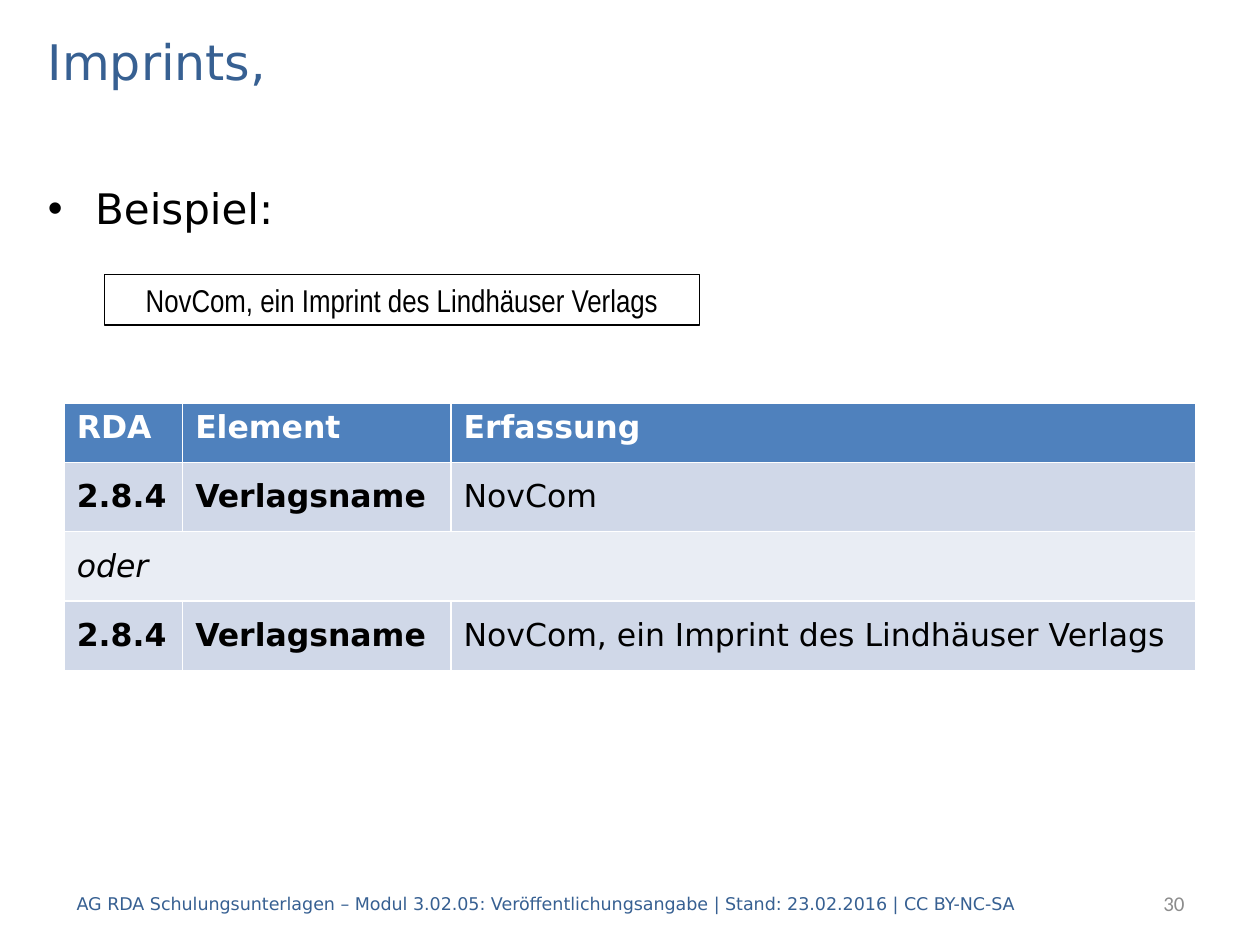
from pptx import Presentation
from pptx import util as u
from pptx.dml.color import RGBColor
from pptx.enum import shapes, text

BLUE = RGBColor(0x37, 0x60, 0x92)
HEADER = RGBColor(0x4F, 0x81, 0xBD)
BAND = RGBColor(0xD0, 0xD8, 0xE8)
PALE = RGBColor(0xE9, 0xED, 0xF4)
GREY = RGBColor(0x8C, 0x8C, 0x8C)
BLACK = RGBColor(0, 0, 0)
WHITE = RGBColor(255, 255, 255)
SANS = "DejaVu Sans"

TITLE = "Imprints,"
BULLET = "Beispiel:"
IMPRINT = "NovCom, ein Imprint des Lindhäuser Verlags"
FOOTER = ("AG RDA Schulungsunterlagen – Modul 3.02.05: Veröffentlichungsangabe"
          " | Stand: 23.02.2016 | CC BY-NC-SA")
NUMBER = "30"
ROWS = [
    ("RDA", "Element", "Erfassung"),
    ("2.8.4", "Verlagsname", "NovCom"),
    ("oder",),
    ("2.8.4", "Verlagsname", IMPRINT),
]
COLUMN_WIDTHS = (0.94, 2.13, 5.91)
ROW_HEIGHTS = (0.47, 0.55, 0.55, 0.55)
MIDDLE = text.MSO_ANCHOR.MIDDLE


def inches(*lengths):
    return [u.Inches(length) for length in lengths]


def write(frame, words, size, color=BLACK, font=SANS, bold=False, italic=False,
          align=text.PP_ALIGN.LEFT, gap=0):
    para = frame.paragraphs[0]
    para.alignment = align
    para.space_before = para.space_after = u.Pt(gap)
    span = para.add_run()
    span.text = words
    span.font.size = u.Pt(size)
    span.font.name = font
    span.font.color.rgb = color
    span.font.bold = bold
    span.font.italic = italic


def place(box, left, top, width, height, anchor=MIDDLE):
    box.left, box.top, box.width, box.height = inches(left, top, width, height)
    frame = box.text_frame
    frame.word_wrap = True
    frame.auto_size = text.MSO_AUTO_SIZE.NONE
    frame.vertical_anchor = anchor
    return frame


def add_imprint_box(page):
    box = page.shapes.add_shape(shapes.MSO_SHAPE.RECTANGLE,
                                *inches(0.83, 2.18, 4.72, 0.4))
    box.shadow.inherit = False
    box.fill.solid()
    box.fill.fore_color.rgb = WHITE
    box.line.color.rgb = BLACK
    box.line.width = u.Pt(0.75)
    box.text_frame.word_wrap = True
    write(box.text_frame, IMPRINT, 18, font="Arial Narrow",
          align=text.PP_ALIGN.CENTER)


def add_table(page):
    table = page.shapes.add_table(
        len(ROWS), len(COLUMN_WIDTHS),
        *inches(0.51, 3.2, sum(COLUMN_WIDTHS), sum(ROW_HEIGHTS))).table
    for column, width in zip(table.columns, COLUMN_WIDTHS):
        column.width = u.Inches(width)
    for r, (words, height) in enumerate(zip(ROWS, ROW_HEIGHTS)):
        table.rows[r].height = u.Inches(height)
        header, alternative = r == 0, len(words) == 1
        if alternative:
            table.cell(r, 0).merge(table.cell(r, len(COLUMN_WIDTHS) - 1))
        for c, value in enumerate(words):
            cell = table.cell(r, c)
            cell.fill.solid()
            cell.fill.fore_color.rgb = HEADER if header else PALE if alternative else BAND
            if not header:
                cell.vertical_anchor = MIDDLE
            write(cell.text_frame, value, 18, WHITE if header else BLACK,
                  bold=header or (c < 2 and not alternative),
                  italic=alternative, gap=0 if header else 6)


def main():
    deck = Presentation()
    deck.slide_width, deck.slide_height = inches(10, 7.5)
    page = deck.slides.add_slide(deck.slide_layouts[1])

    write(place(page.shapes.title, 0.28, 0.2, 9.45, 0.56), TITLE, 28, BLUE)
    body = place(page.placeholders[1], 0.28, 0.92, 9.45, 5.98, text.MSO_ANCHOR.TOP)
    body.margin_top = u.Inches(0.53)
    write(body, BULLET, 24)

    add_imprint_box(page)
    add_table(page)

    footer = page.shapes.add_textbox(0, 0, 0, 0)
    write(place(footer, 0.51, 6.97, 8.27, 0.4), FOOTER, 10, BLUE)
    number = page.shapes.add_textbox(0, 0, 0, 0)
    write(place(number, 7.91, 6.97, 1.59, 0.4), NUMBER, 12, GREY, "Calibri",
          align=text.PP_ALIGN.RIGHT)
    deck.save("out.pptx")


if __name__ == "__main__":
    main()
